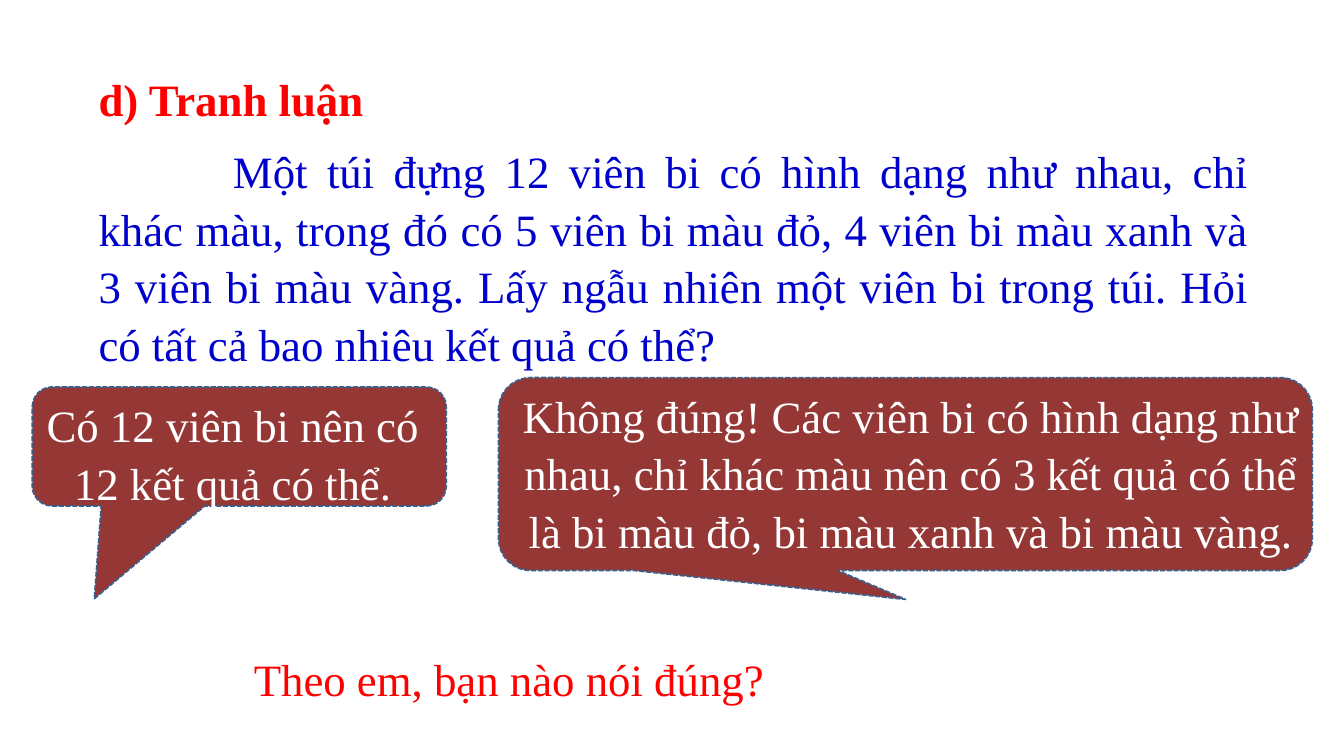
from dataclasses import dataclass

from pptx import Presentation
from pptx.dml.color import RGBColor
from pptx.enum.dml import MSO_LINE
from pptx.enum.shapes import MSO_SHAPE
from pptx.enum.text import MSO_AUTO_SIZE, PP_ALIGN
from pptx.util import Emu, Pt

EMU_PER_PX = 4572
CALLOUT = MSO_SHAPE.ROUNDED_RECTANGULAR_CALLOUT
DASH = MSO_LINE.SQUARE_DOT
FIT_TEXT = MSO_AUTO_SIZE.SHAPE_TO_FIT_TEXT
LEFT, CENTER, JUSTIFY = PP_ALIGN.LEFT, PP_ALIGN.CENTER, PP_ALIGN.JUSTIFY


@dataclass(frozen=True)
class Theme:
    font: str = "Times New Roman"
    size: Pt = Pt(24)
    accent: RGBColor = RGBColor(0xFF, 0x00, 0x00)
    body: RGBColor = RGBColor(0x00, 0x00, 0xCC)
    speech: RGBColor = RGBColor(0xFF, 0xFF, 0xFF)
    bubble: RGBColor = RGBColor(0x95, 0x37, 0x35)
    outline: RGBColor = RGBColor(0x3A, 0x5F, 0x8C)
    outline_width: Pt = Pt(0.9)
    line_spacing: float = 1.07
    space_after: Pt = Pt(8)


THEME = Theme()


@dataclass(frozen=True)
class Area:
    left: int
    top: int
    width: int
    height: int

    def emu(self) -> list[Emu]:
        return [px(n) for n in (self.left, self.top, self.width, self.height)]


@dataclass(frozen=True)
class Paragraph:
    text: str
    color: RGBColor
    align: PP_ALIGN = LEFT
    bold: bool = False
    indent: int = 0
    spaced: bool = True


@dataclass(frozen=True)
class Speech:
    bubble: Area
    tail: tuple[float, float]
    text_area: Area
    text: str


def px(length: int) -> Emu:
    return Emu(length * EMU_PER_PX)


def draw_text(page, area: Area, paragraphs: list[Paragraph]) -> None:
    frame = page.shapes.add_textbox(*area.emu()).text_frame
    frame.word_wrap = True
    frame.auto_size = FIT_TEXT
    frame.text = "\n".join(item.text for item in paragraphs)
    for para, item in zip(frame.paragraphs, paragraphs):
        para.alignment = item.align
        if item.spaced:
            para.line_spacing = THEME.line_spacing
            para.space_after = THEME.space_after
        if item.indent:
            properties = para._p.get_or_add_pPr()
            properties.set("marL", "0")
            properties.set("indent", str(px(item.indent)))
        for span in para.runs:
            span.font.name = THEME.font
            span.font.size = THEME.size
            span.font.bold = item.bold
            span.font.color.rgb = item.color


def draw_speech(page, speech: Speech) -> None:
    bubble = page.shapes.add_shape(CALLOUT, *speech.bubble.emu())
    bubble.shadow.inherit = False
    bubble.adjustments[0], bubble.adjustments[1] = speech.tail
    bubble.fill.solid()
    bubble.fill.fore_color.rgb = THEME.bubble
    bubble.line.color.rgb = THEME.outline
    bubble.line.width = THEME.outline_width
    bubble.line.dash_style = DASH
    draw_text(page, speech.text_area, [Paragraph(speech.text, THEME.speech, CENTER)])


PROBLEM = [
    Paragraph("d) Tranh luận", THEME.accent, bold=True),
    Paragraph(
        "Một túi đựng 12 viên bi có hình dạng như nhau, chỉ khác màu, "
        "trong đó có 5 viên bi màu đỏ, 4 viên bi màu xanh và 3 viên bi màu vàng. "
        "Lấy ngẫu nhiên một viên bi trong túi. Hỏi có tất cả bao nhiêu kết quả có thể?",
        THEME.body, JUSTIFY, indent=200,
    ),
]
SPEECHES = [
    Speech(
        Area(48, 576, 616, 177), (-0.35, 1.28), Area(37, 577, 618, 194),
        "Có 12 viên bi nên có 12 kết quả có thể.",
    ),
    Speech(
        Area(742, 562, 1211, 287), (0, 0.65), Area(743, 563, 1224, 280),
        "Không đúng! Các viên bi có hình dạng như nhau, chỉ khác màu nên có "
        "3 kết quả có thể là bi màu đỏ, bi màu xanh và bi màu vàng.",
    ),
]
QUESTION = Paragraph("Theo em, bạn nào nói đúng?", THEME.accent, spaced=False)


def main() -> None:
    deck = Presentation()
    deck.slide_width, deck.slide_height = px(2000), px(1125)
    page = deck.slides.add_slide(deck.slide_layouts[6])
    draw_text(page, Area(127, 91, 1750, 474), PROBLEM)
    for speech in SPEECHES:
        draw_speech(page, speech)
    draw_text(page, Area(358, 960, 834, 100), [QUESTION])
    deck.save("out.pptx")


if __name__ == "__main__":
    main()
